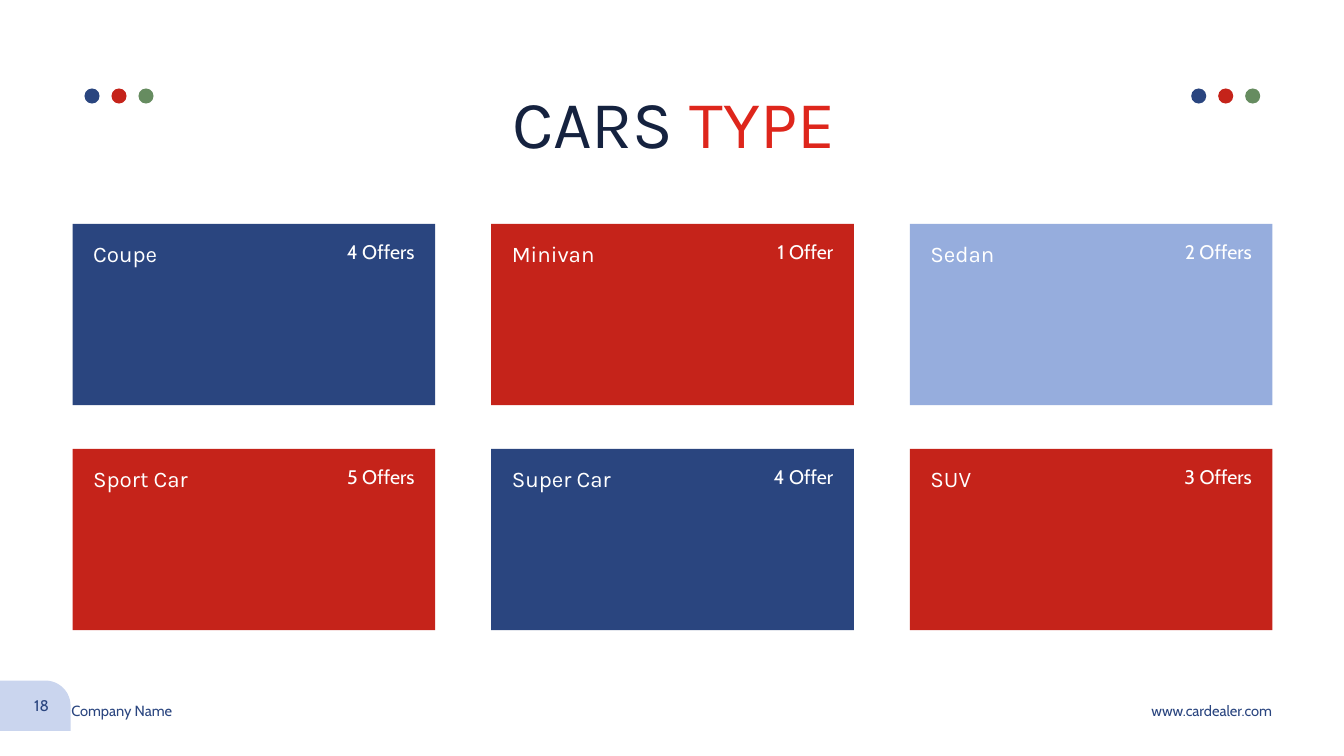
from dataclasses import dataclass

import pptx
import pptx.dml.color
import pptx.enum.shapes
import pptx.enum.text
import pptx.util

Cm = pptx.util.Cm
Pt = pptx.util.Pt
RGBColor = pptx.dml.color.RGBColor
Shape = pptx.enum.shapes.MSO_SHAPE
Align = pptx.enum.text.PP_ALIGN
Anchor = pptx.enum.text.MSO_ANCHOR

BLUE = RGBColor(0x2A, 0x45, 0x7F)
RED = RGBColor(0xC5, 0x23, 0x1A)
GREEN = RGBColor(0x66, 0x8C, 0x60)
SKY = RGBColor(0x96, 0xAD, 0xDD)
PALE = RGBColor(0xCA, 0xD5, 0xEE)
NAVY = RGBColor(0x15, 0x22, 0x3F)
BRIGHT = RGBColor(0xDE, 0x26, 0x1C)
WHITE = RGBColor(0xFF, 0xFF, 0xFF)

HEAD = "Karla"
BODY = "Cabin"


@dataclass
class Box:
    left: float
    top: float
    width: float
    height: float


@dataclass
class Style:
    face: str
    size: float
    color: RGBColor
    align: Align = Align.LEFT


@dataclass
class Card:
    name: str
    offer: str
    fill: RGBColor
    width: float


CARDS = [
    Card("Coupe", "4 Offers", BLUE, 2.26),
    Card("Minivan", "1 Offer", RED, 2.62),
    Card("Sedan", "2 Offers", SKY, 2.62),
    Card("Sport Car", "5 Offers", RED, 3.1),
    Card("Super Car", "4 Offer", BLUE, 3.2),
    Card("SUV", "3 Offers", RED, 2.62),
]

NAME = Style(HEAD, 16, WHITE)
OFFER = Style(BODY, 14, WHITE, Align.RIGHT)
FOOT = Style(BODY, 10.5, BLUE)
SITE = Style(BODY, 10.5, BLUE, Align.RIGHT)
PAGE = Style(BODY, 11, BLUE, Align.RIGHT)


def place(box: Box) -> list[int]:
    return [Cm(box.left), Cm(box.top), Cm(box.width), Cm(box.height)]


def paint(run, style: Style) -> None:
    run.font.name = style.face
    run.font.size = Pt(style.size)
    run.font.color.rgb = style.color


def write(frame, text: str, style: Style) -> None:
    frame.text = text
    frame.word_wrap = True
    line = frame.paragraphs[0]
    line.alignment = style.align
    paint(line.runs[0], style)


def label(slide, box: Box, text: str, style: Style) -> None:
    write(slide.shapes.add_textbox(*place(box)).text_frame, text, style)


def block(slide, kind: Shape, box: Box, fill: RGBColor):
    shape = slide.shapes.add_shape(kind, *place(box))
    shape.shadow.inherit = False
    shape.fill.solid()
    shape.fill.fore_color.rgb = fill
    shape.line.fill.background()
    return shape


def title(slide) -> None:
    head = slide.shapes.title
    head.left, head.top, head.width, head.height = place(Box(8.15, 1.93, 17.65, 2.31))
    frame = head.text_frame
    frame.text = "CARS "
    frame.word_wrap = True
    frame.auto_size = pptx.enum.text.MSO_AUTO_SIZE.NONE
    frame.vertical_anchor = Anchor.TOP
    line = frame.paragraphs[0]
    line.alignment = Align.CENTER
    line.add_run().text = "TYPE"
    for run, color in zip(line.runs, (NAVY, BRIGHT)):
        paint(run, Style(HEAD, 48, color))


def dots(slide, left: float) -> None:
    for i, color in enumerate((BLUE, RED, GREEN)):
        block(slide, Shape.OVAL, Box(left + i * 0.68, 2.23, 0.38, 0.38), color)


def cards(slide) -> None:
    for i, card in enumerate(CARDS):
        row, col = divmod(i, 3)
        left, top = 1.83 + col * 10.55, 5.64 + row * 5.67
        block(slide, Shape.RECTANGLE, Box(left, top, 9.14, 4.57), card.fill)
        label(slide, Box(left + 0.27, top + 0.28, card.width, 0.94), card.name, NAME)
        label(slide, Box(left + 6.13, top + 0.29, 2.74, 0.86), card.offer, OFFER)


def footer(slide) -> None:
    label(slide, Box(1.55, 17.55, 3.23, 0.73), "Company Name", FOOT)
    label(slide, Box(28.6, 17.55, 3.71, 0.73), "www.cardealer.com", SITE)
    tab = block(slide, Shape.ROUND_1_RECTANGLE, Box(-1.02, 17.15, 2.8, 1.27), PALE)
    tab.adjustments[0] = 0.5
    frame = tab.text_frame
    frame.vertical_anchor = Anchor.MIDDLE
    frame.margin_right = Cm(0.36)
    write(frame, "18", PAGE)


def main() -> None:
    deck = pptx.Presentation()
    deck.slide_width, deck.slide_height = Cm(33.87), Cm(19.05)
    slide = deck.slides.add_slide(deck.slide_layouts[5])
    title(slide)
    for left in (2.13, 30.02):
        dots(slide, left)
    cards(slide)
    footer(slide)
    deck.save("out.pptx")


if __name__ == "__main__":
    main()
